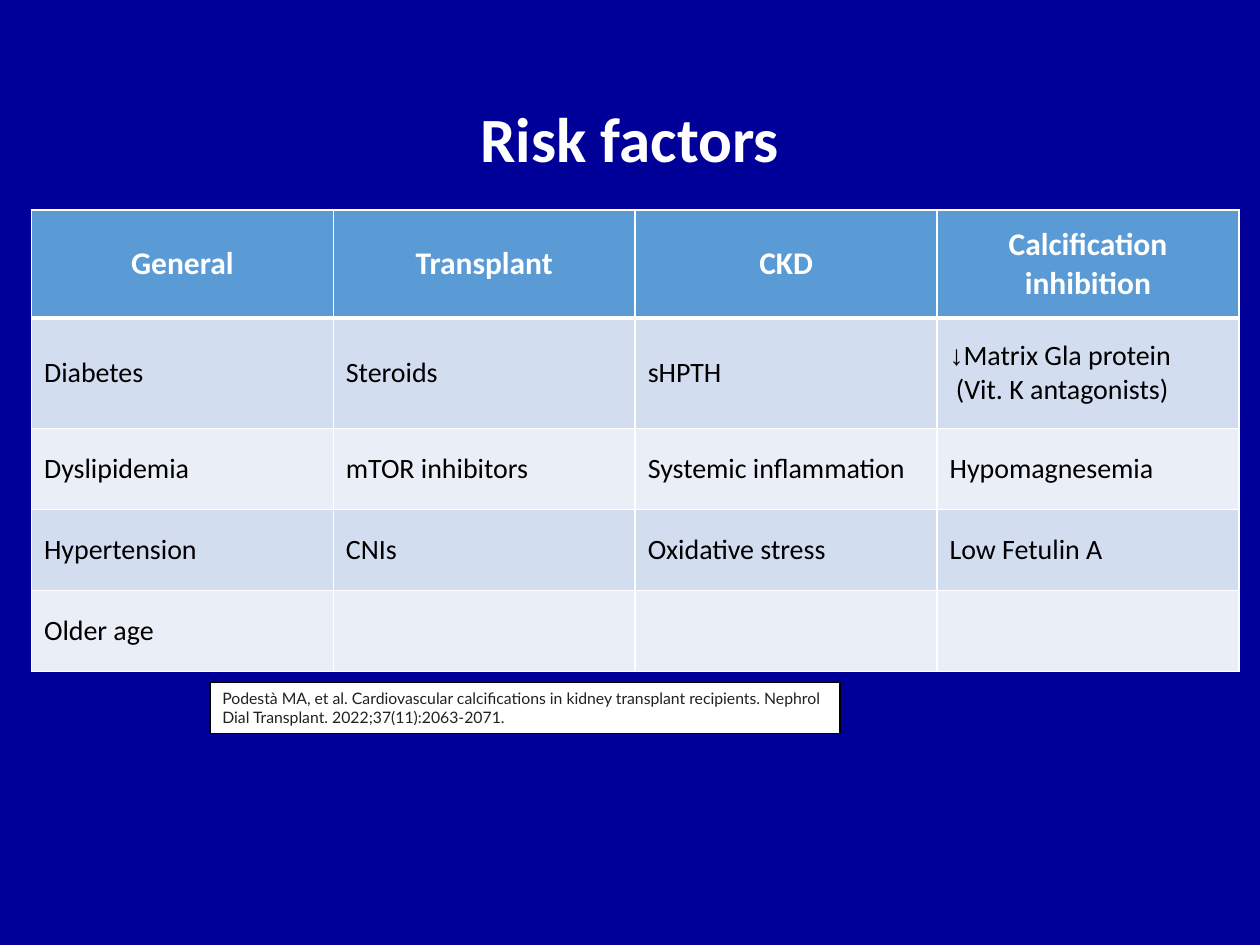
from lxml import etree
from pptx import Presentation
from pptx.dml.color import RGBColor
from pptx.enum.shapes import MSO_SHAPE
from pptx.enum.text import MSO_ANCHOR, PP_ALIGN
from pptx.oxml.ns import qn
from pptx.util import Pt

LEFT, CENTER = PP_ALIGN.LEFT, PP_ALIGN.CENTER
MIDDLE, TOP = MSO_ANCHOR.MIDDLE, MSO_ANCHOR.TOP
RECTANGLE = MSO_SHAPE.RECTANGLE

NAVY = RGBColor(0x00, 0x00, 0x99)
WHITE = RGBColor(0xFF, 0xFF, 0xFF)
BLACK = RGBColor(0x00, 0x00, 0x00)
HEADER_BLUE = RGBColor(0x5B, 0x9B, 0xD5)
BAND_DARK = RGBColor(0xD2, 0xDE, 0xEF)
BAND_LIGHT = RGBColor(0xEA, 0xEF, 0xF7)
CITATION_GREY = RGBColor(0x21, 0x21, 0x21)


def write_text(frame, text, size, color, font="Calibri", bold=False, align=LEFT):
    """Write one paragraph per line; arrows are set in Times New Roman."""
    for index, line in enumerate(text.split("\n")):
        para = frame.paragraphs[0] if index == 0 else frame.add_paragraph()
        para.alignment = align
        arrow = "↓" if line.startswith("↓") else ""
        for part, face in ((arrow, "Times New Roman"), (line[len(arrow):], font)):
            if part:
                span = para.add_run()
                span.text = part
                span.font.name = face
                span.font.size = Pt(size)
                span.font.bold = bold
                span.font.color.rgb = color


def set_borders(cell, **widths):
    """Draw solid white cell borders, with widths in points by side."""
    properties = cell._tc.get_or_add_tcPr()
    for position, side in enumerate("LRTB"):
        line = etree.Element(qn(f"a:ln{side}"), w=str(Pt(widths.get(side, 1))))
        fill = etree.SubElement(line, qn("a:solidFill"))
        etree.SubElement(fill, qn("a:srgbClr"), val=str(WHITE))
        properties.insert(position, line)


# Slide
deck = Presentation()
deck.slide_width, deck.slide_height = Pt(720), Pt(540)
page = deck.slides.add_slide(deck.slide_layouts[5])
page.background.fill.solid()
page.background.fill.fore_color.rgb = NAVY

# Title
title = page.shapes.title
title.left, title.top, title.width, title.height = Pt(49.5), Pt(28.75), Pt(621), Pt(104.4)
title.text_frame.vertical_anchor = MIDDLE
write_text(title.text_frame, "Risk factors", 36, WHITE, bold=True, align=CENTER)
title.text_frame.paragraphs[0].line_spacing = 0.9

# Risk factor table
rows = [
    ["General", "Transplant", "CKD", "Calcification inhibition"],
    ["Diabetes", "Steroids", "sHPTH", "↓Matrix Gla protein\n (Vit. K antagonists)"],
    ["Dyslipidemia", "mTOR inhibitors", "Systemic inflammation", "Hypomagnesemia"],
    ["Hypertension", "CNIs", "Oxidative stress", "Low Fetulin A"],
    ["Older age", "", "", ""],
]
row_heights = [61.8, 63, 46.3, 46.3, 46.3]
table = page.shapes.add_table(
    len(rows), len(rows[0]), Pt(18), Pt(120), Pt(690), Pt(sum(row_heights))
).table
for column in table.columns:
    column.width = Pt(172.5)
for row_index, (labels, height) in enumerate(zip(rows, row_heights)):
    table.rows[row_index].height = Pt(height)
    header = row_index == 0
    band = HEADER_BLUE if header else BAND_DARK if row_index % 2 else BAND_LIGHT
    for column_index, label in enumerate(labels):
        cell = table.cell(row_index, column_index)
        cell.vertical_anchor = MIDDLE
        cell.fill.solid()
        cell.fill.fore_color.rgb = band
        set_borders(cell, T=3 if row_index == 1 else 1, B=3 if header else 1)
        if header:
            write_text(cell.text_frame, label, 18, WHITE, bold=True, align=CENTER)
        else:
            write_text(cell.text_frame, label, 16, BLACK)

# Citation
citation = page.shapes.add_shape(RECTANGLE, Pt(120), Pt(390), Pt(360), Pt(29))
citation.shadow.inherit = False
citation.fill.solid()
citation.fill.fore_color.rgb = WHITE
citation.line.color.rgb = BLACK
citation.line.width = Pt(0.75)
citation.text_frame.word_wrap = True
citation.text_frame.vertical_anchor = TOP
write_text(
    citation.text_frame,
    "Podestà MA, et al. Cardiovascular calcifications in kidney transplant recipients. "
    "Nephrol Dial Transplant. 2022;37(11):2063-2071.",
    9, CITATION_GREY, font="Lato",
)

deck.save("out.pptx")
